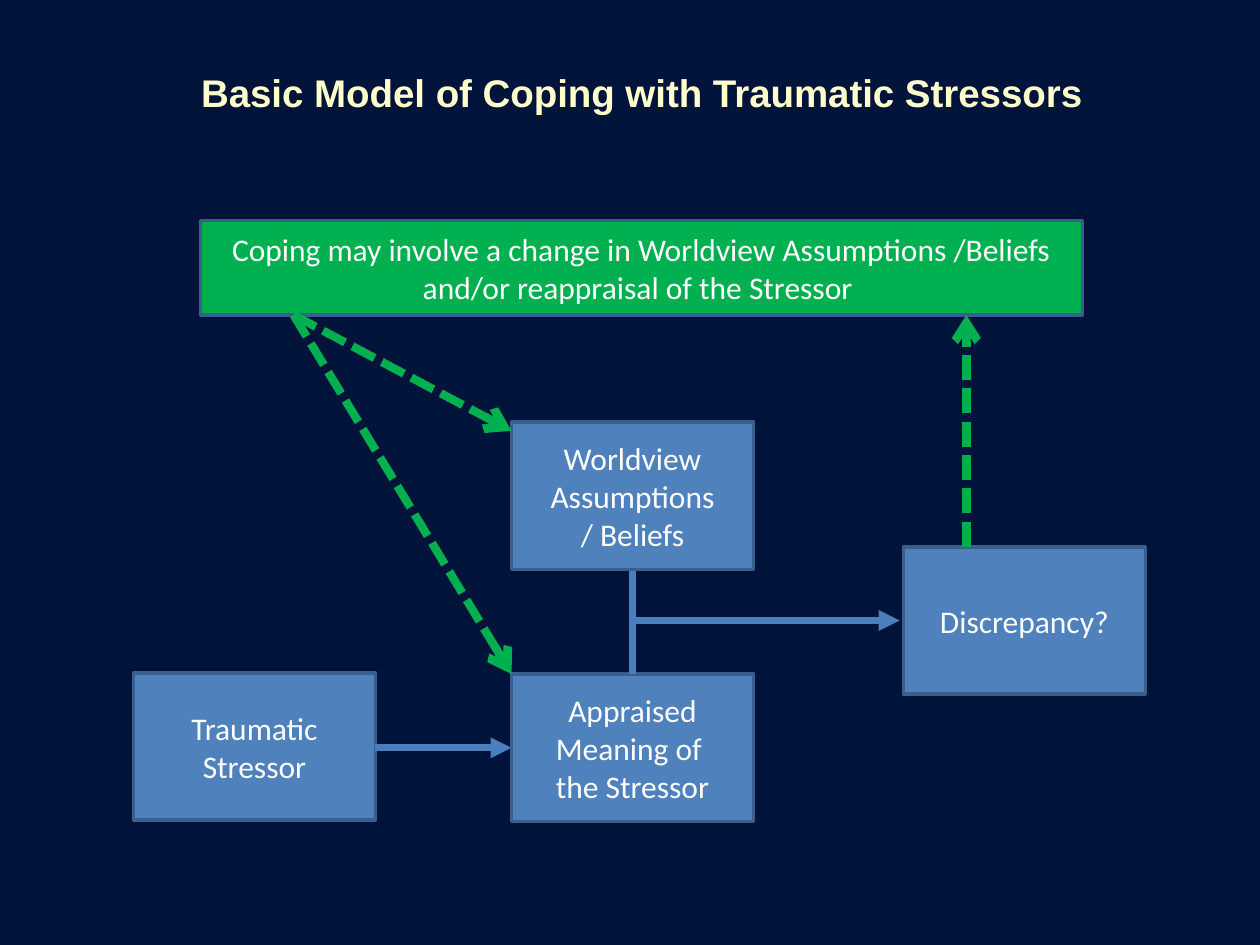
from pptx import Presentation
from pptx.dml.color import RGBColor
from pptx.enum.dml import MSO_LINE
from pptx.enum.shapes import MSO_CONNECTOR as Connector, MSO_SHAPE as Shape
from pptx.enum.text import MSO_ANCHOR as Anchor, PP_ALIGN as Align
from pptx.oxml.ns import qn
from pptx.util import Inches, Pt
from lxml.etree import SubElement

COLORS = {
    "background": "00133A", "title": "FFFFCC", "text": "FFFFFF", "box": "4F81BD",
    "border": "3A5F8C", "flow": "4B7EBC", "coping": "00B050",
}
WIDTH, HEIGHT = Inches(10), Inches(7.5)
COLUMNS, ROWS = 100, 75
BOX_WIDTH, BOX_HEIGHT = 19.2, 11.7
STRESSOR, MIDDLE, OUTCOME = 10.6, 40.6, 71.7
WORLDVIEW_TOP, DISCREPANCY_TOP, APPRAISAL_TOP = 33.5, 43.4, 53.5
BANNER = (15.9, 17.5, 70, 7.5)


def color(name):
    """Return the named colour."""
    return RGBColor.from_string(COLORS[name])


def place(column, row):
    """Turn a grid position or extent into slide lengths."""
    return int(WIDTH * column / COLUMNS), int(HEIGHT * row / ROWS)


def write_text(shape, *lines, font="Calibri", size=18, fill="text", bold=False, anchor=Anchor.MIDDLE):
    """Fill a shape with centred paragraphs."""
    frame = shape.text_frame
    frame.word_wrap = True
    frame.vertical_anchor = anchor
    for index, line in enumerate(lines):
        paragraph = frame.add_paragraph() if index else frame.paragraphs[0]
        paragraph.alignment = Align.CENTER
        run = paragraph.add_run()
        run.text = line
        run.font.name, run.font.size, run.font.bold = font, Pt(size), bold
        run.font.color.rgb = color(fill)


def add_title(slide, text):
    """Add the slide title."""
    shape = slide.shapes.add_textbox(*place(6, 5), *place(88.3, 4.7))
    shape.text_frame.margin_left = Inches(0.26)
    write_text(shape, text, font="Arial", size=22, fill="title", bold=True, anchor=Anchor.TOP)


def add_box(slide, column, row, *lines, width=BOX_WIDTH, height=BOX_HEIGHT, fill="box"):
    """Add a bordered box with text."""
    shape = slide.shapes.add_shape(Shape.RECTANGLE, *place(column, row), *place(width, height))
    shape.shadow.inherit = False
    shape.fill.solid()
    shape.fill.fore_color.rgb = color(fill)
    shape.line.color.rgb = color("border")
    shape.line.width = Pt(2)
    write_text(shape, *lines)


def add_link(slide, start, end, stroke="flow", width=4, dash=None, head="triangle"):
    """Add a straight link, with an arrowhead at its end unless head is None."""
    link = slide.shapes.add_connector(Connector.STRAIGHT, *place(*start), *place(*end))
    link.line.color.rgb = color(stroke)
    link.line.width = Pt(width)
    if dash:
        link.line.dash_style = dash
    properties = link._element.spPr
    if head:
        SubElement(properties.find(qn("a:ln")), qn("a:tailEnd"), type=head)
    SubElement(properties, qn("a:effectLst"))


def add_coping_link(slide, start, end):
    """Add a dashed coping arrow."""
    add_link(slide, start, end, stroke="coping", width=4.75, dash=MSO_LINE.SQUARE_DOT, head="arrow")


def main():
    """Build and save the slide."""
    presentation = Presentation()
    presentation.slide_width, presentation.slide_height = WIDTH, HEIGHT
    slide = presentation.slides.add_slide(presentation.slide_layouts[6])
    slide.background.fill.solid()
    slide.background.fill.fore_color.rgb = color("background")

    add_title(slide, "Basic Model of Coping with Traumatic Stressors")
    left, top, width, height = BANNER
    banner_bottom = top + height
    center = MIDDLE + BOX_WIDTH / 2
    appraisal_row = APPRAISAL_TOP + BOX_HEIGHT / 2
    discrepancy_row = DISCREPANCY_TOP + BOX_HEIGHT / 2

    add_box(slide, STRESSOR, APPRAISAL_TOP - 0.1, "Traumatic Stressor")
    add_link(slide, (STRESSOR + BOX_WIDTH, appraisal_row), (MIDDLE, appraisal_row))
    add_box(slide, MIDDLE, APPRAISAL_TOP, "Appraised Meaning of ", "the Stressor")
    add_link(slide, (center, APPRAISAL_TOP), (center, WORLDVIEW_TOP + BOX_HEIGHT), head=None)
    add_box(slide, MIDDLE, WORLDVIEW_TOP, "Worldview Assumptions", "/ Beliefs")
    add_link(slide, (center, discrepancy_row), (OUTCOME - 0.3, discrepancy_row))
    add_box(slide, OUTCOME, DISCREPANCY_TOP, "Discrepancy?")
    add_box(
        slide, left, top,
        "Coping may involve a change in Worldview Assumptions /Beliefs and/or reappraisal of the Stressor ",
        width=width, height=height, fill="coping",
    )
    add_coping_link(slide, (76.7, DISCREPANCY_TOP), (76.7, banner_bottom))
    for row in (APPRAISAL_TOP, WORLDVIEW_TOP + 0.7):
        add_coping_link(slide, (23.3, banner_bottom), (MIDDLE, row))

    presentation.save("out.pptx")


if __name__ == "__main__":
    main()
